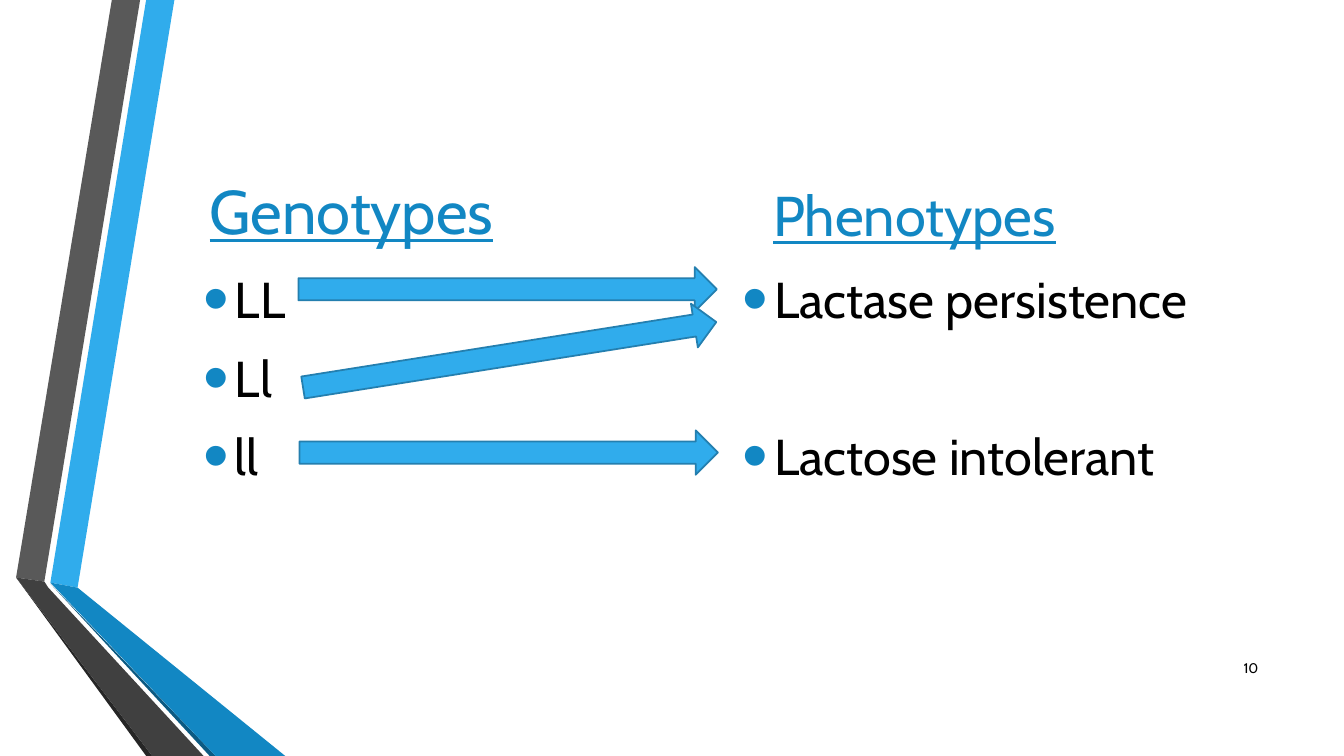
from lxml.etree import SubElement
from pptx import Presentation
from pptx.dml.color import RGBColor
from pptx.enum.shapes import MSO_SHAPE as Preset
from pptx.enum.text import MSO_ANCHOR as Anchor, PP_ALIGN as Align
from pptx.oxml.ns import qn
from pptx.util import Inches, Pt

FONT = "Cabin"
COLORS = {
    "blue": "30ACEC", "deep_blue": "1287C3", "navy": "0C5A82", "outline": "247FAF",
    "gray": "595959", "dark_gray": "404040", "charcoal": "262626", "black": "000000",
}
RIBBONS = [
    ("blue", [(0.5, 5.78), (0.77, 5.83), (1.73, 0), (1.45, 0)]),
    ("gray", [(1.39, 0), (1.11, 0), (0.16, 5.73), (0.44, 5.77)]),
    ("charcoal", [(0.16, 5.73), (1.45, 7.5), (1.51, 7.5)]),
    ("navy", [(0.5, 5.79), (2.08, 7.5), (2.14, 7.5)]),
    ("deep_blue", [(0.5, 5.78), (2.14, 7.5), (2.83, 7.5), (0.77, 5.83)]),
    ("dark_gray", [(2.02, 7.5), (0.48, 5.83), (0.44, 5.77), (0.16, 5.73), (1.51, 7.5)]),
]
ARROWS = [(2.96, 2.65, 0), (2.97, 4.27, 0), (2.98, 3.3, -9)]
LINE_GAP = 7
SKIPPED_LINE_GAP = 63


def color(name):
    """Return the named colour."""
    return RGBColor.from_string(COLORS[name])


def add_ribbon(slide, fill, points):
    """Draw one filled panel of the folded ribbons."""
    corners = [(Inches(x), Inches(y)) for x, y in points]
    builder = slide.shapes.build_freeform(*corners[0], scale=1.0)
    builder.add_line_segments(corners[1:], close=True)
    shape = builder.convert_to_shape()
    shape.shadow.inherit = False
    shape.fill.solid()
    shape.fill.fore_color.rgb = color(fill)
    shape.line.fill.background()


def add_bullet(paragraph):
    """Give a paragraph a hanging blue bullet."""
    properties = paragraph._p.get_or_add_pPr()
    properties.set("marL", str(Inches(0.31)))
    properties.set("indent", str(-Inches(0.31)))
    bullet_color = SubElement(properties, qn("a:buClr"))
    SubElement(bullet_color, qn("a:srgbClr"), val=COLORS["deep_blue"])
    SubElement(properties, qn("a:buSzPct"), val="145000")
    SubElement(properties, qn("a:buFont"), typeface="Arial")
    SubElement(properties, qn("a:buChar"), char="•")


def add_text(slide, lines, left, top, width, height, size, fill="black", underline=False,
             anchor=Anchor.TOP, align=Align.LEFT, bullets=False, gap=0):
    """Add a text box with one paragraph per line."""
    box = slide.shapes.add_textbox(Inches(left), Inches(top), Inches(width), Inches(height))
    frame = box.text_frame
    frame.word_wrap = True
    frame.vertical_anchor = anchor
    for index, line in enumerate(lines):
        paragraph = frame.add_paragraph() if index else frame.paragraphs[0]
        paragraph.alignment = align
        paragraph.space_before = Pt(gap if index else 0)
        paragraph.space_after = Pt(6 if bullets else 0)
        if bullets:
            add_bullet(paragraph)
        run = paragraph.add_run()
        run.text = line
        run.font.name = FONT
        run.font.size = Pt(size)
        run.font.underline = underline
        run.font.color.rgb = color(fill)


def add_heading(slide, text, left, top, width, size):
    """Add an underlined column heading."""
    add_text(slide, [text], left, top, width, 0.63, size, fill="deep_blue",
             underline=True, anchor=Anchor.BOTTOM)


def add_list(slide, lines, left, gap):
    """Add a bulleted column."""
    add_text(slide, lines, left, 2.61, 5.35, 2.69, 36, bullets=True, gap=gap)


def add_arrow(slide, left, top, rotation):
    """Add a block arrow from a genotype to its phenotype."""
    arrow = slide.shapes.add_shape(Preset.RIGHT_ARROW, Inches(left), Inches(top),
                                   Inches(4.15), Inches(0.44))
    arrow.rotation = rotation
    arrow.shadow.inherit = False
    arrow.fill.solid()
    arrow.fill.fore_color.rgb = color("blue")
    arrow.line.color.rgb = color("outline")
    arrow.line.width = Pt(1.25)


def main():
    """Build and save the slide."""
    presentation = Presentation()
    presentation.slide_width = Inches(13.33)
    presentation.slide_height = Inches(7.5)
    slide = presentation.slides.add_slide(presentation.slide_layouts[6])
    for fill, points in RIBBONS:
        add_ribbon(slide, fill, points)
    add_heading(slide, "Genotypes", 1.98, 1.87, 5.04, 44)
    add_list(slide, ["LL", "Ll", "ll"], 1.92, LINE_GAP)
    add_heading(slide, "Phenotypes", 7.57, 1.88, 5.06, 40)
    add_list(slide, ["Lactase persistence", "Lactose intolerant"], 7.27, SKIPPED_LINE_GAP)
    for left, top, rotation in ARROWS:
        add_arrow(slide, left, top, rotation)
    add_text(slide, ["10"], 11.98, 6.43, 0.6, 0.4, 10, anchor=Anchor.MIDDLE, align=Align.RIGHT)
    presentation.save("out.pptx")


if __name__ == "__main__":
    main()
